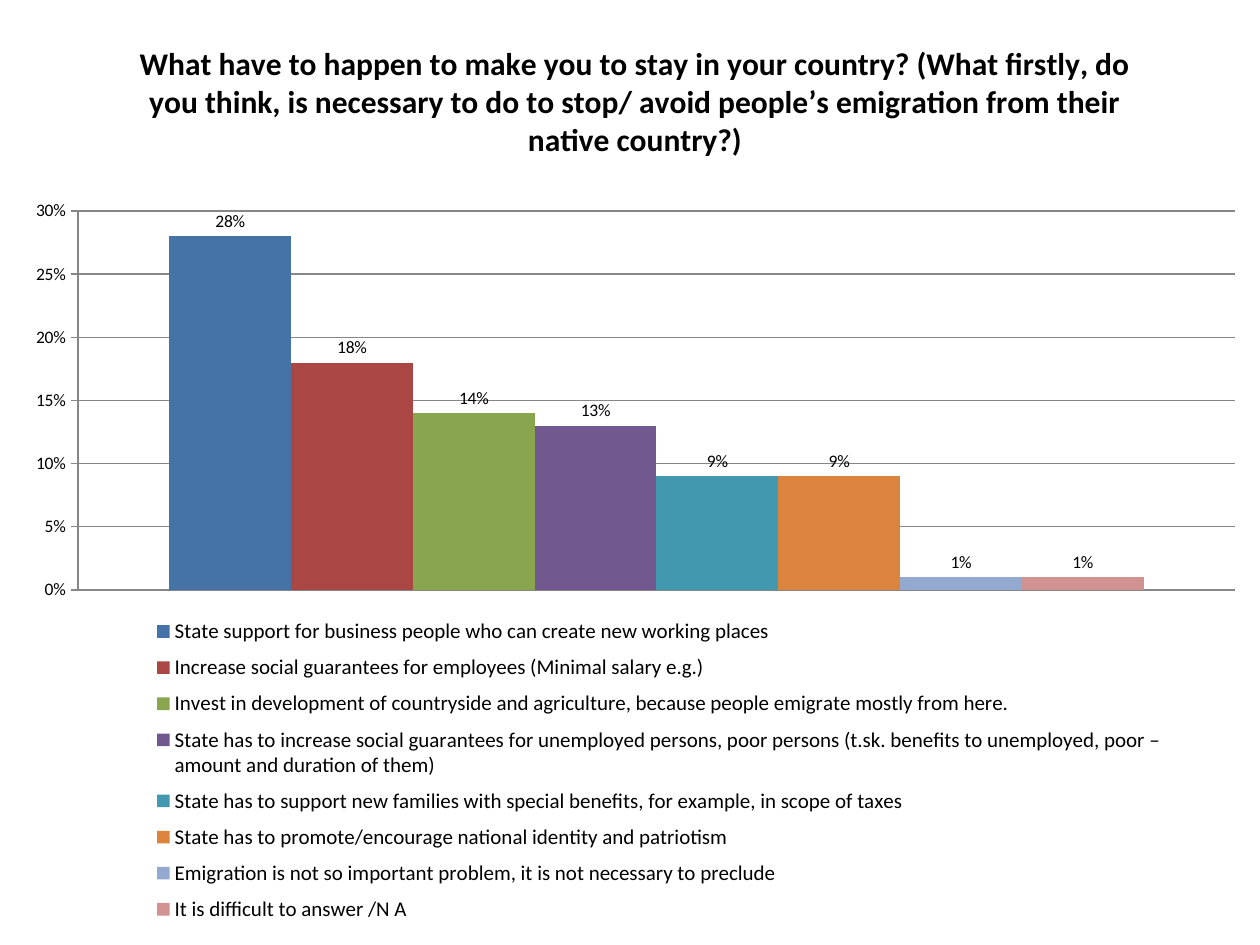
"""Build a slide with a column chart of answers about staying in one's country."""
import lxml.etree
import pptx
import pptx.chart.data
import pptx.dml.color
import pptx.enum.chart
import pptx.oxml.ns
import pptx.util

WIDTH, HEIGHT = 1260, 945
PX = 914400 // 126
GRID_COLOR = "868686"
TITLE = (
    "What have to happen to make you to stay in your country? (What firstly, do you think, "
    "is necessary to do to stop/ avoid people’s emigration from their native country?)"
)
ANSWERS = [
    ("State support for business people who can create new working places", 0.28, "4572A7"),
    ("Increase social guarantees for employees (Minimal salary e.g.)", 0.18, "AA4643"),
    ("Invest in development of countryside and agriculture, because people emigrate mostly "
     "from here.", 0.14, "89A54E"),
    ("State has to increase social guarantees for unemployed persons, poor persons (t.sk. "
     "benefits to unemployed, poor – amount and duration of them)", 0.13, "71588F"),
    ("State has to support new families with special benefits, for example, in scope of taxes",
     0.09, "4198AF"),
    ("State has to promote/encourage national identity and patriotism", 0.09, "DB843D"),
    ("Emigration is not so important problem, it is not necessary to preclude", 0.01, "93A9CF"),
    ("It is difficult to answer /N A", 0.01, "D19392"),
]
PLOT_BOX = (78, 211, 1157, 379)
LEGEND_BOX = (147, 608, 1025, 325)
TITLE_CORNER = (134, 36)


def color(value):
    return pptx.dml.color.RGBColor.from_string(value)


def style_font(font, size, bold=False):
    font.name = "Calibri"
    font.size = pptx.util.Pt(size)
    font.bold = bold
    font.color.rgb = color("000000")


def add_text(frame, text, **font_format):
    run = frame.paragraphs[0].add_run()
    run.text = text
    style_font(run.font, **font_format)


def style_line(line):
    line.color.rgb = color(GRID_COLOR)
    line.width = pptx.util.Pt(0.75)


def place(element, box, inner=False):
    """Give a chart part a fixed place, measured in px."""
    tag = pptx.oxml.ns.qn
    for old in element.findall(tag("c:layout")):
        element.remove(old)
    layout = lxml.etree.Element(tag("c:layout"))
    manual = lxml.etree.SubElement(layout, tag("c:manualLayout"))
    settings = [("layoutTarget", "inner")] if inner else []
    settings += [("xMode", "edge"), ("yMode", "edge")]
    sizes = (WIDTH, HEIGHT, WIDTH, HEIGHT)
    settings += [(name, f"{part / whole:.4f}") for name, part, whole in zip("xywh", box, sizes)]
    for name, value in settings:
        lxml.etree.SubElement(manual, tag(f"c:{name}")).set("val", value)
    before = [element.find(tag(f"c:{name}")) for name in ("tx", "legendPos")]
    previous = next((child for child in before if child is not None), None)
    if previous is None:
        element.insert(0, layout)
    else:
        previous.addnext(layout)


def add_answer_chart(slide):
    data = pptx.chart.data.CategoryChartData(number_format="0%")
    data.categories = ["1"]
    for name, value, _ in ANSWERS:
        data.add_series(name, [value])
    chart_type = pptx.enum.chart.XL_CHART_TYPE.COLUMN_CLUSTERED
    chart = slide.shapes.add_chart(chart_type, 0, 0, WIDTH * PX, HEIGHT * PX, data).chart
    style_font(chart.font, 10)

    chart.has_title = True
    add_text(chart.chart_title.text_frame, TITLE, size=18, bold=True)
    chart.chart_title.include_in_layout = False

    plot = chart.plots[0]
    plot.gap_width = 150
    plot.overlap = 0
    plot.vary_by_categories = False
    for series, (_, _, fill) in zip(plot.series, ANSWERS):
        series.format.fill.solid()
        series.format.fill.fore_color.rgb = color(fill)
        labels = series.data_labels
        labels.show_value = True
        labels.number_format = "0%"
        labels.number_format_is_linked = False
        labels.position = pptx.enum.chart.XL_LABEL_POSITION.OUTSIDE_END
        style_font(labels.font, 10)

    chart.category_axis.visible = False
    axis = chart.value_axis
    axis.minimum_scale, axis.maximum_scale, axis.major_unit = 0, 0.3, 0.05
    axis.major_tick_mark = pptx.enum.chart.XL_TICK_MARK.OUTSIDE
    axis.tick_labels.number_format = "0%"
    axis.tick_labels.number_format_is_linked = False
    style_font(axis.tick_labels.font, 10)
    axis.has_major_gridlines = True
    style_line(axis.format.line)
    style_line(axis.major_gridlines.format.line)

    chart.has_legend = True
    chart.legend.position = pptx.enum.chart.XL_LEGEND_POSITION.RIGHT
    chart.legend.include_in_layout = False
    style_font(chart.legend.font, 12)

    chart_element = chart.element.find(pptx.oxml.ns.qn("c:chart"))
    for name, box in (("title", TITLE_CORNER), ("plotArea", PLOT_BOX), ("legend", LEGEND_BOX)):
        place(chart_element.find(pptx.oxml.ns.qn(f"c:{name}")), box, name == "plotArea")


def main():
    presentation = pptx.Presentation()
    presentation.slide_width = WIDTH * PX
    presentation.slide_height = HEIGHT * PX
    add_answer_chart(presentation.slides.add_slide(presentation.slide_layouts[6]))
    presentation.save("out.pptx")


if __name__ == "__main__":
    main()
